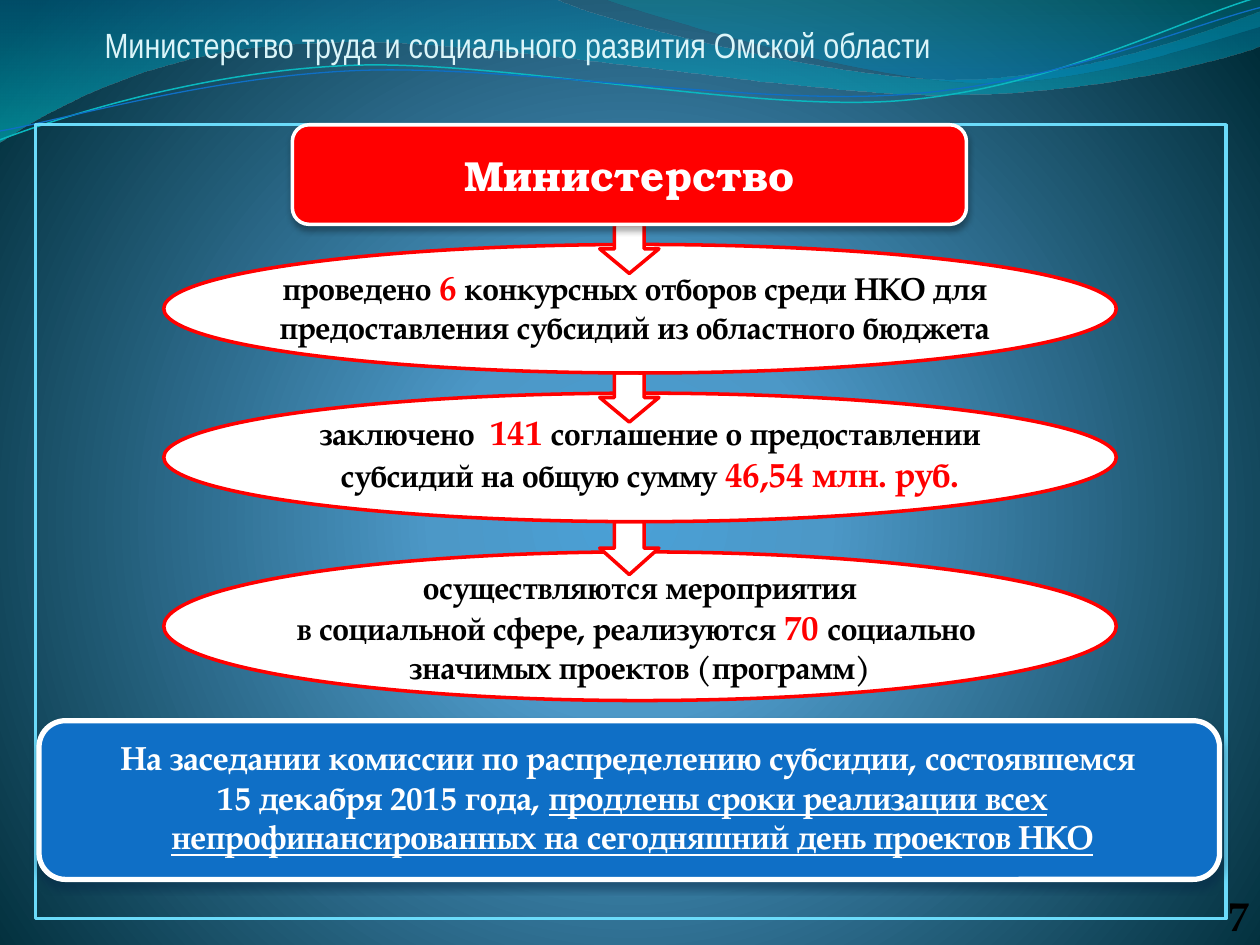
"""Builds the slide on subsidies for non-profit organisations."""
from math import cos, radians, sin

from lxml.etree import SubElement
from pptx import Presentation
from pptx.dml.color import RGBColor
from pptx.enum.shapes import MSO_SHAPE as SHAPE
from pptx.enum.text import MSO_ANCHOR as ANCHOR, PP_ALIGN as ALIGN
from pptx.oxml.ns import qn
from pptx.util import Inches, Pt

WHITE = RGBColor(0xFF, 0xFF, 0xFF)
BLACK = RGBColor(0x00, 0x00, 0x00)
RED = RGBColor(0xFF, 0x00, 0x00)
BLUE = RGBColor(0x0F, 0x6F, 0xC6)
TEAL = RGBColor(0x0A, 0xB8, 0xBF)
CYAN = RGBColor(0x6B, 0xDB, 0xFA)
PALE = RGBColor(0xDB, 0xF5, 0xF9)
NAVY = RGBColor(0x04, 0x27, 0x47)
SKY = RGBColor(0x4A, 0xA0, 0xD6)
STEEL = RGBColor(0x4C, 0x98, 0xC7)
ABYSS = RGBColor(0x00, 0x2C, 0x38)
OCEAN = RGBColor(0x00, 0x74, 0xA1)
TURQUOISE = RGBColor(0x00, 0xC6, 0xCF)
LAGOON = RGBColor(0x00, 0xA1, 0xA9)
AZURE = RGBColor(0x00, 0x8B, 0xBF)

BODY, HEAD, NARROW = "TeX Gyre Pagella", "TeX Gyre Bonum", "Arial Narrow"
TILT = 357.3

BACKDROP = [(0, SKY, 100), (25, STEEL, 100), (100, ABYSS, 100)]
BANDS = [
    ((-0.01, -0.01, 10.02, 1.14),
     [(0, 0), (4.4, -0.01),
      (4.76, 0.17, 6.64, 0.63, 7.58, 0.63), (8.53, 0.63, 9.58, 0.26, 10, 0.09),
      (10.01, 0.36),
      (9.83, 0.44, 8.7, 0.76, 7.46, 0.75), (6.22, 0.75, 3.82, 0.28, 2.57, 0.34),
      (1.29, 0.36, 0.46, 0.83, -0.01, 1.13), (0, 0)],
     [(0, OCEAN, 45), (100, TURQUOISE, 55)]),
    ((4.79, -0.01, 5.21, 0.7),
     [(4.79, -0.01), (5.09, 0.11, 6.82, 0.62, 7.69, 0.65),
      (8.56, 0.69, 9.61, 0.32, 10, 0.21), (10, 0), (4.79, -0.01)],
     [(0, LAGOON, 30), (80, AZURE, 45)]),
]
WAVES = [
    ((-0.02, 0.22, 10.02, 0.71),
     [(0, 1.11), (0.48, 0.93, 1.58, 0.57, 2.77, 0.52),
      (3.95, 0.47, 5.93, 0.89, 7.13, 0.8), (8.33, 0.71, 9.38, 0.15, 9.98, -0.02)],
     TEAL, 0.85),
    ((-0.02, 0.3, 10.03, 0.58),
     [(0, 1.04), (0.47, 0.96, 1.64, 0.61, 2.83, 0.56),
      (4.03, 0.51, 5.97, 0.84, 7.17, 0.75), (8.36, 0.67, 9.41, 0.21, 10, 0.06)],
     BLUE, 0.75),
]

STEPS = [
    dict(top=4.38, height=1.18, arrow=(4.14, 0.42), box=(1.38, 4.46, 7.4, 1.04),
         runs=[("осуществляются мероприятия\nв социальной сфере, реализуются ", 18, BLACK),
               ("70", 20, RED),
               (" социально \nзначимых проектов (программ)", 18, BLACK)]),
    dict(top=3.12, height=1.02, arrow=(2.96, 0.39), box=(1.54, 3.21, 7.24, 0.77),
         runs=[("заключено  ", 18, BLACK), ("141", 20, RED),
               (" соглашение о предоставлении\nсубсидий на общую сумму ", 18, BLACK),
               ("46,54 млн. руб.", 20, RED)]),
    dict(top=1.94, height=1.02, arrow=(1.78, 0.39), box=(1.85, 2.06, 6.38, 0.74),
         runs=[("проведено ", 18, BLACK), ("6", 20, RED),
               (" конкурсных отборов среди НКО для предоставления субсидий"
                " из областного бюджета", 18, BLACK)]),
]
TITLE = [("Министерство труда и социального развития Омской области", 20, PALE)]
MINISTRY = [("Министерство", 24, WHITE)]
NUMBER = [("7", 24, BLACK)]
DECISION = [
    ("На заседании комиссии по распределению субсидии, состоявшемся \n"
     "15 декабря 2015 года, ", 19, WHITE),
    ("продлены сроки реализации всех непрофинансированных"
     " на сегодняшний день проектов НКО", 19, WHITE, True),
]


def set_gradient(fill, holder, stops, circle=False):
    fill.gradient()
    grad = holder.find(".//" + qn("a:gradFill"))
    for child in list(grad):
        grad.remove(child)
    gs_list = SubElement(grad, qn("a:gsLst"))
    for pos, color, opacity in stops:
        gs = SubElement(gs_list, qn("a:gs"), pos=str(pos * 1000))
        clr = SubElement(gs, qn("a:srgbClr"), val=str(color))
        if opacity < 100:
            SubElement(clr, qn("a:alpha"), val=str(opacity * 1000))
    if circle:
        way = SubElement(grad, qn("a:path"), path="circle")
        SubElement(way, qn("a:fillToRect"), l="10000", t="110000", r="10000", b="100000")
    else:
        SubElement(grad, qn("a:lin"), ang="5400000", scaled="0")


def add_curve(s, box, segments, close, rotation=0):
    left, top, width, height = box
    dx, dy, turn = width / 2, height / 2, radians(-rotation)

    def local(x, y):
        x, y = x - left - dx, y - top - dy
        return (Inches(dx + x * cos(turn) - y * sin(turn)),
                Inches(dy + x * sin(turn) + y * cos(turn)))

    builder = s.shapes.build_freeform(scale=1.0)
    builder.add_line_segments([(Inches(width), Inches(height))], close=close)
    sp = builder.convert_to_shape()
    sp.left, sp.top, sp.width, sp.height = map(Inches, box)
    sp.rotation = rotation
    sp.shadow.inherit = False
    outline = sp._element.find(".//" + qn("a:path"))
    for child in list(outline):
        outline.remove(child)
    for i, seg in enumerate(segments):
        tag = "a:moveTo" if i == 0 else "a:lnTo" if len(seg) == 2 else "a:cubicBezTo"
        step = SubElement(outline, qn(tag))
        for x, y in zip(seg[::2], seg[1::2]):
            px, py = local(x, y)
            SubElement(step, qn("a:pt"), x=str(px), y=str(py))
    if close:
        SubElement(outline, qn("a:close"))
    return sp


def add_shape(s, kind, box, fill, line, width):
    sp = s.shapes.add_shape(kind, *map(Inches, box))
    sp.shadow.inherit = False
    if fill is None:
        sp.fill.background()
    else:
        sp.fill.solid()
        sp.fill.fore_color.rgb = fill
    sp.line.color.rgb = line
    sp.line.width = Pt(width)
    return sp


def add_shadow(sp, color, opacity, blur, dist):
    effects = sp._element.spPr.find(qn("a:effectLst"))
    shadow = SubElement(effects, qn("a:outerShdw"), blurRad=str(Pt(blur)),
                        dist=str(Pt(dist)), dir="5400000", rotWithShape="0")
    clr = SubElement(shadow, qn("a:srgbClr"), val=str(color))
    SubElement(clr, qn("a:alpha"), val=str(opacity * 1000))


def write(tf, runs, font=BODY, bold=True, align=ALIGN.CENTER, anchor=ANCHOR.TOP):
    tf.word_wrap = True
    tf.vertical_anchor = anchor
    p = tf.paragraphs[0]
    p.alignment = align
    for text, size, color, *underline in runs:
        for i, part in enumerate(text.split("\n")):
            if i:
                p.add_line_break()
            r = p.add_run()
            r.text = part
            r.font.name, r.font.size, r.font.bold = font, Pt(size), bold
            r.font.color.rgb = color
            if underline:
                r.font.underline = True


def add_text(s, box, runs, insets=(0.1, 0.05, 0.1, 0.05), **style):
    tf = s.shapes.add_textbox(*map(Inches, box)).text_frame
    tf.margin_left, tf.margin_top, tf.margin_right, tf.margin_bottom = map(Inches, insets)
    write(tf, runs, **style)


def main():
    prs = Presentation()
    prs.slide_width, prs.slide_height = Inches(10), Inches(7.5)
    s = prs.slides.add_slide(prs.slide_layouts[6])
    set_gradient(s.background.fill, s._element, BACKDROP, circle=True)

    for box, segments, stops in BANDS:
        band = add_curve(s, box, segments, True)
        set_gradient(band.fill, band._element.spPr, stops)
        band.line.fill.background()
    for box, segments, color, width in WAVES:
        wave = add_curve(s, box, segments, False, TILT)
        wave.fill.background()
        wave.line.color.rgb = color
        wave.line.width = Pt(width)

    for step in STEPS:
        add_shape(s, SHAPE.OVAL, (1.3, step["top"], 7.56, step["height"]), WHITE, RED, 2)
        add_text(s, step["box"], step["runs"])
        top, height = step["arrow"]
        add_shape(s, SHAPE.DOWN_ARROW, (4.76, top, 0.47, height), WHITE, RED, 2)

    add_shape(s, SHAPE.RECTANGLE, (0.28, 0.99, 9.45, 6.3), None, CYAN, 2)
    add_text(s, (9.09, 7.06, 0.83, 0.4), NUMBER, (0, 0, 0, 0),
             align=ALIGN.RIGHT, anchor=ANCHOR.BOTTOM)
    add_text(s, (0.83, 0.05, 8.43, 0.47), TITLE, (0, 0.05, 0, 0), font=NARROW,
             bold=False, align=ALIGN.LEFT, anchor=ANCHOR.BOTTOM)

    panel = add_shape(s, SHAPE.ROUNDED_RECTANGLE, (0.31, 5.72, 9.37, 1.26), BLUE, WHITE, 3)
    add_shadow(panel, NAVY, 48, 4.5, 3)
    add_text(s, (0.16, 5.8, 9.72, 1.06), DECISION)

    ministry = add_shape(s, SHAPE.FLOWCHART_ALTERNATE_PROCESS, (2.32, 0.99, 5.35, 0.79),
                         RED, WHITE, 2)
    add_shadow(ministry, BLACK, 32, 3.5, 2.2)
    write(ministry.text_frame, MINISTRY, font=HEAD, anchor=ANCHOR.MIDDLE)

    prs.save("out.pptx")


if __name__ == "__main__":
    main()
